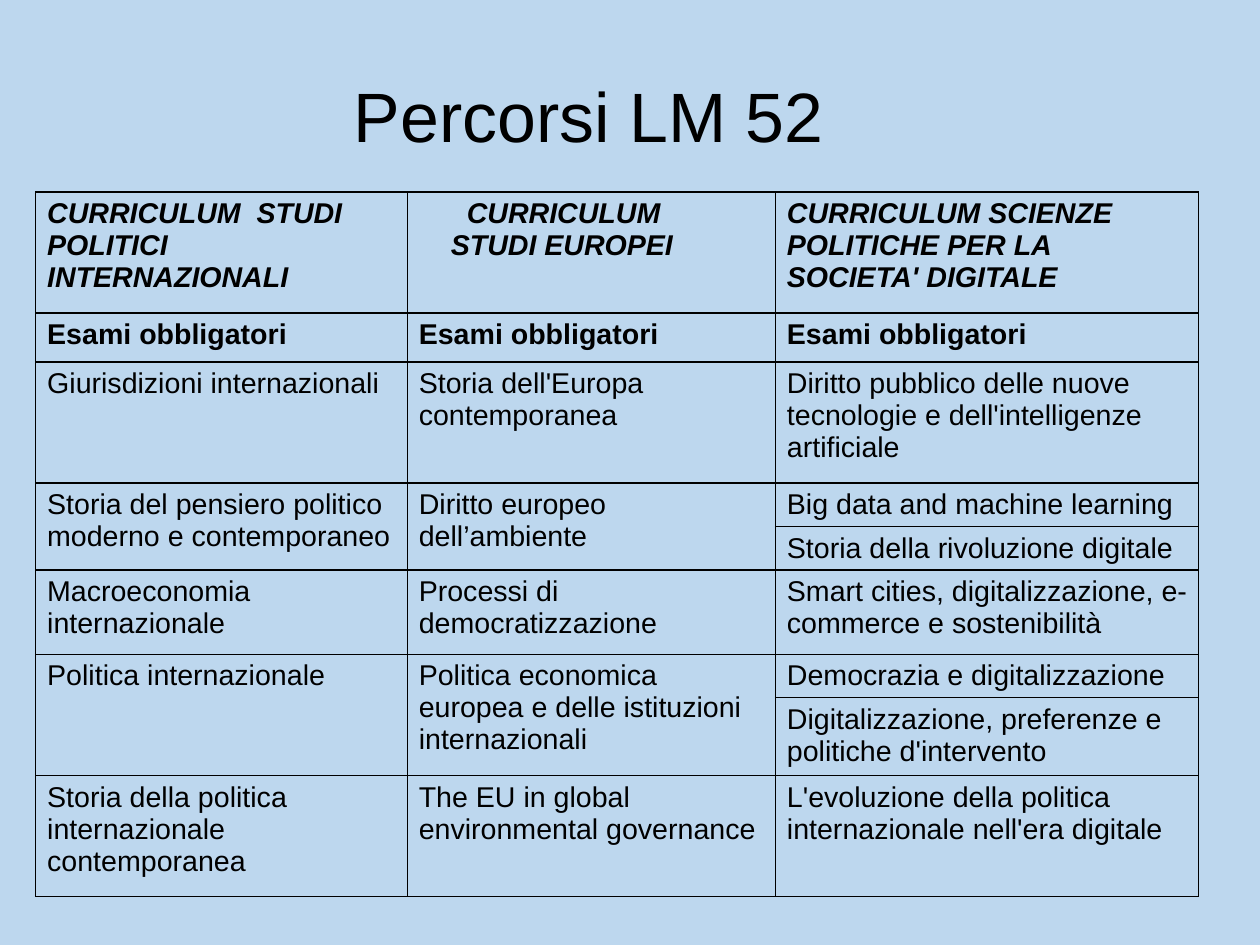
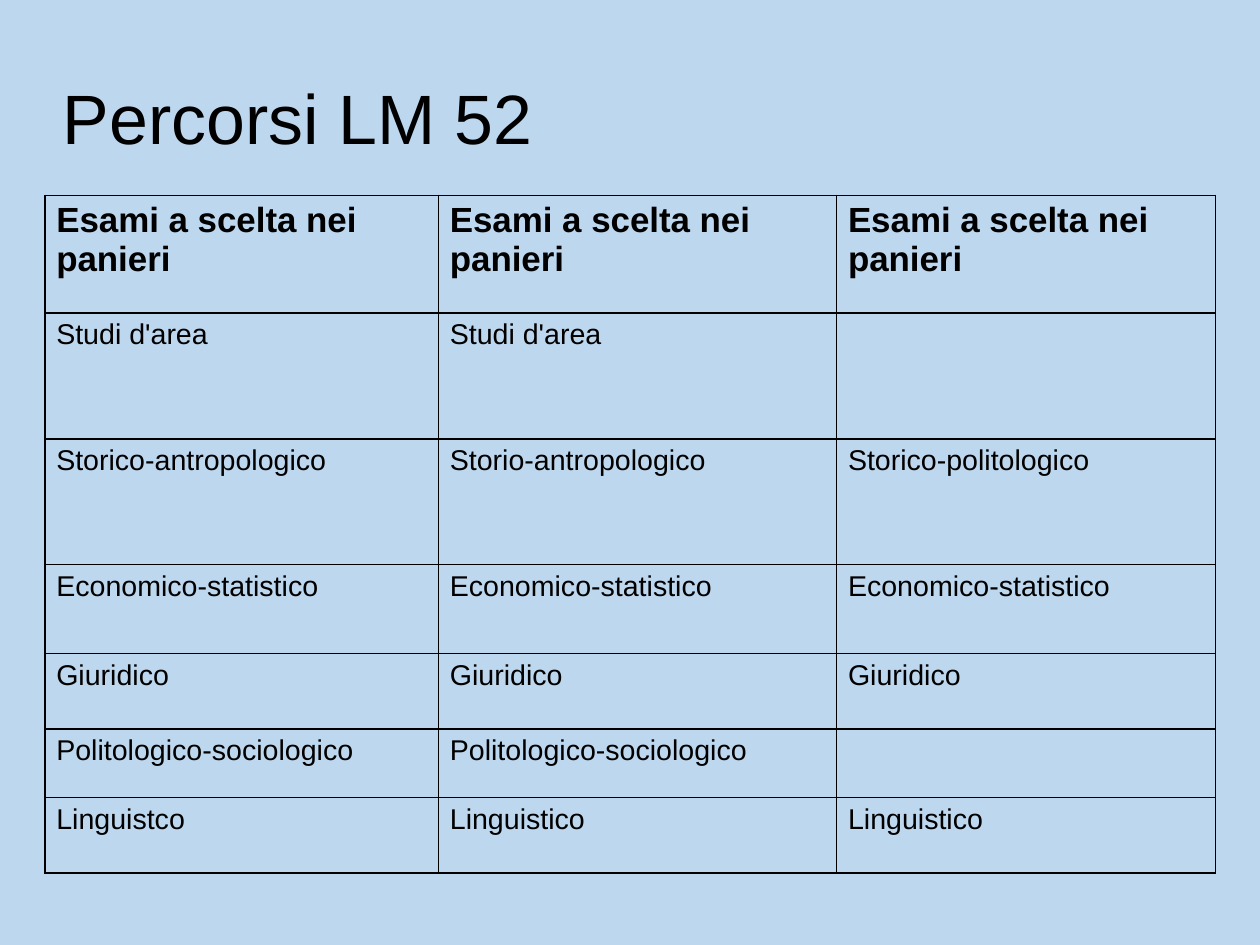
from collections import namedtuple

from lxml.etree import SubElement
from pptx import Presentation
from pptx.dml.color import RGBColor
from pptx.enum.lang import MSO_LANGUAGE_ID as Language
from pptx.enum.text import MSO_ANCHOR, PP_ALIGN
from pptx.oxml.ns import qn
from pptx.util import Cm, Inches, Pt

SLIDE_WIDTH, SLIDE_HEIGHT = Cm(28), Cm(21)
BACKGROUND, INK = "BDD7EE", "000000"
FONT = "Arial"
TITLE_SIZE, HEADING_SIZE, BODY_SIZE = 44, 22, 18
BORDER_WIDTH = Pt(1)
TITLE = "Percorsi LM 52"
ABOVE = None  # the cell continues the one above it

# Boxes are in percent of the slide's width and height.
Box = namedtuple("Box", "left top width height")

CURRICULA = [
    ["CURRICULUM  STUDI POLITICI INTERNAZIONALI",
     "CURRICULUM\nSTUDI EUROPEI",
     "CURRICULUM SCIENZE POLITICHE PER LA\nSOCIETA' DIGITALE"],
    ["Esami obbligatori"] * 3,
    ["Giurisdizioni internazionali",
     "Storia dell'Europa contemporanea",
     "Diritto pubblico delle nuove tecnologie e dell'intelligenze artificiale"],
    ["Storia del pensiero politico moderno e contemporaneo",
     "Diritto europeo dell’ambiente",
     "Big data and machine learning"],
    [ABOVE, ABOVE, "Storia della rivoluzione digitale"],
    ["Macroeconomia internazionale",
     "Processi di democratizzazione",
     "Smart cities, digitalizzazione, e-commerce e sostenibilità"],
    ["Politica internazionale",
     "Politica economica europea e delle istituzioni internazionali",
     "Democrazia e digitalizzazione"],
    [ABOVE, ABOVE, "Digitalizzazione, preferenze e politiche d'intervento"],
    ["Storia della politica internazionale contemporanea",
     "The EU in global environmental governance",
     "L'evoluzione della politica internazionale nell'era digitale"],
]

ELECTIVES = [
    ["Esami a scelta nei panieri"] * 3,
    ["Studi d'area", "Studi d'area", ""],
    ["Storico-antropologico", "Storio-antropologico", "Storico-politologico"],
    ["Economico-statistico"] * 3,
    ["Giuridico"] * 3,
    ["Politologico-sociologico", "Politologico-sociologico", ""],
    ["Linguistco", "Linguistico", "Linguistico"],
]


def color(hex_string):
    return RGBColor.from_string(hex_string)


def place(box):
    """Turn a box in percent into left, top, width and height in EMU."""
    sides = (SLIDE_WIDTH, SLIDE_HEIGHT) * 2
    return [int(side * share / 100) for side, share in zip(sides, box)]


def split(total, weights):
    return [int(total * weight / sum(weights)) for weight in weights]


def format_text(text_frame, size, bold=False, italic=False):
    for paragraph in text_frame.paragraphs:
        for run in paragraph.runs:
            font = run.font
            font.name, font.size = FONT, Pt(size)
            font.bold, font.italic = bold, italic
            font.color.rgb = color(INK)
            font.language_id = Language.ITALIAN


def add_slide(presentation):
    slide = presentation.slides.add_slide(presentation.slide_layouts[6])
    fill = slide.background.fill
    fill.solid()
    fill.fore_color.rgb = color(BACKGROUND)
    return slide


def add_title(slide, box, alignment):
    text_frame = slide.shapes.add_textbox(*place(box)).text_frame
    text_frame.word_wrap = True
    text_frame.vertical_anchor = MSO_ANCHOR.MIDDLE
    text_frame.margin_left = text_frame.margin_right = 0
    text_frame.margin_top = text_frame.margin_bottom = 0
    text_frame.text = TITLE
    text_frame.paragraphs[0].alignment = alignment
    format_text(text_frame, TITLE_SIZE)


def style_cell(cell):
    properties = cell._tc.get_or_add_tcPr()
    for side in ("a:lnL", "a:lnR", "a:lnT", "a:lnB"):
        line = SubElement(properties, qn(side), w=str(BORDER_WIDTH))
        SubElement(SubElement(line, qn("a:solidFill")), qn("a:srgbClr"), val=INK)
    cell.fill.solid()
    cell.fill.fore_color.rgb = color(BACKGROUND)


def add_course_table(slide, box, rows, column_weights, row_weights, row_styles):
    """Build a bordered table; row_styles maps a row to its text format."""
    left, top, width, height = place(box)
    table = slide.shapes.add_table(
        len(rows), len(column_weights), left, top, width, height).table
    table.first_row = table.horz_banding = False
    for column, column_width in zip(table.columns, split(width, column_weights)):
        column.width = column_width
    for row, row_height in zip(table.rows, split(height, row_weights)):
        row.height = row_height
    for row_index, texts in enumerate(rows):
        for column_index, text in enumerate(texts):
            cell = table.cell(row_index, column_index)
            style_cell(cell)
            if text is ABOVE:
                table.cell(row_index - 1, column_index).merge(cell)
            elif text:
                cell.text_frame.text = text
                format_text(cell.text_frame,
                            **row_styles.get(row_index, {"size": BODY_SIZE}))
    return table


def indent_paragraphs(cell, indents):
    for paragraph, indent in zip(cell.text_frame.paragraphs, indents):
        paragraph._p.get_or_add_pPr().set("marL", str(Inches(indent)))


def add_curricula_slide(presentation):
    slide = add_slide(presentation)
    table = add_course_table(
        slide, Box(2.84, 20.33, 92.29, 74.5), CURRICULA,
        column_weights=[3.25, 3.22, 3.7],
        row_weights=[1.06, 0.43, 1.06, 0.38, 0.38, 0.74, 0.38, 0.68, 1.06],
        row_styles={0: {"size": BODY_SIZE, "bold": True, "italic": True},
                    1: {"size": BODY_SIZE, "bold": True}})
    indent_paragraphs(table.cell(0, 1), [0.42, 0.28])
    add_title(slide, Box(19.95, 3.8, 53.6, 16.6), PP_ALIGN.CENTER)


def add_electives_slide(presentation):
    slide = add_slide(presentation)
    add_title(slide, Box(5, 4, 90, 16.7), PP_ALIGN.LEFT)
    add_course_table(
        slide, Box(3.56, 20.67, 92.9, 71.75), ELECTIVES,
        column_weights=[3.44, 3.48, 3.31],
        row_weights=[1.03, 1.1, 1.1, 0.78, 0.66, 0.6, 0.66],
        row_styles={0: {"size": HEADING_SIZE, "bold": True}})


def main():
    presentation = Presentation()
    presentation.slide_width = SLIDE_WIDTH
    presentation.slide_height = SLIDE_HEIGHT
    add_curricula_slide(presentation)
    add_electives_slide(presentation)
    presentation.save("out.pptx")


if __name__ == "__main__":
    main()
